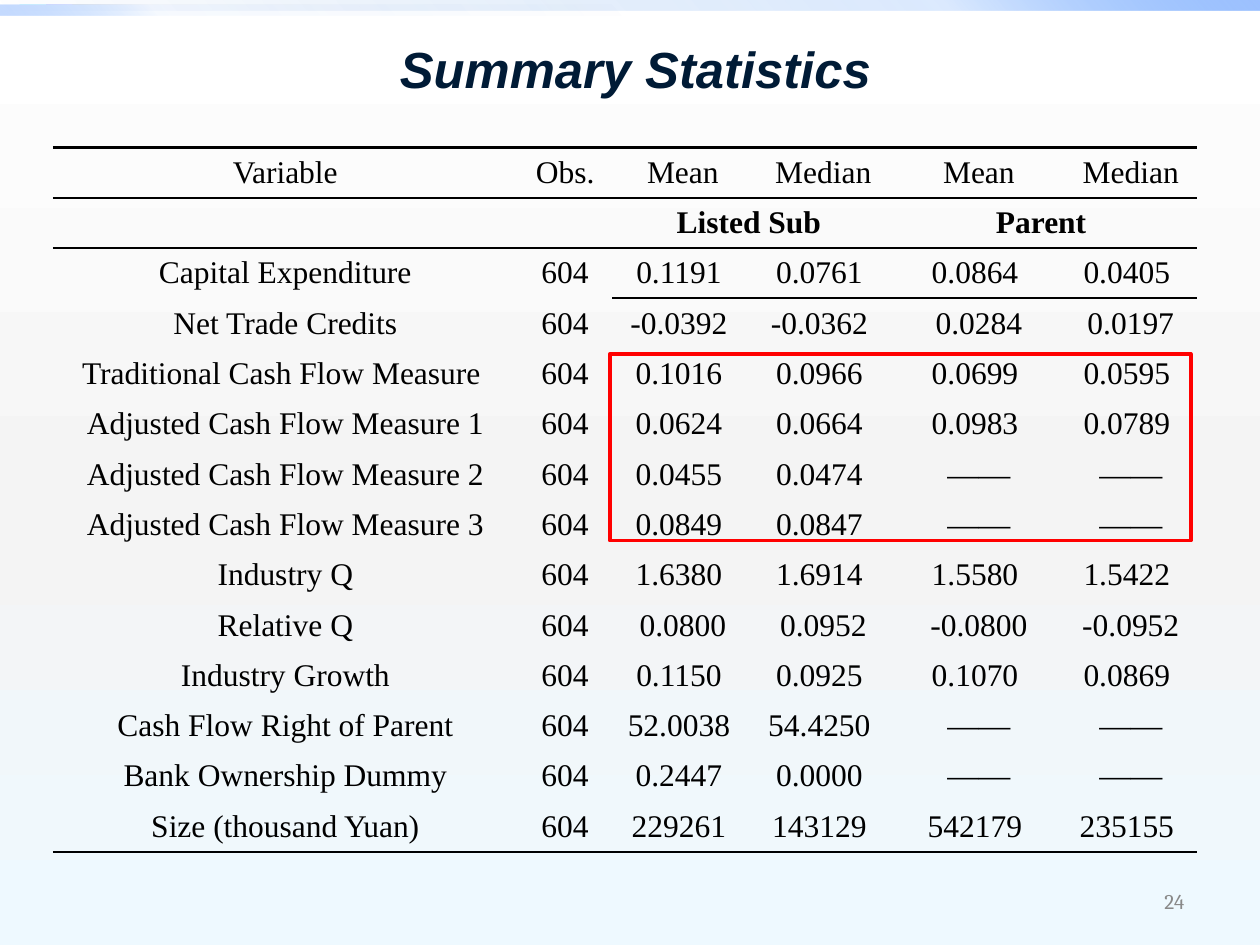
from lxml.etree import SubElement
from pptx import Presentation
from pptx.dml.color import RGBColor
from pptx.enum.shapes import MSO_SHAPE
from pptx.enum.text import MSO_ANCHOR, PP_ALIGN
from pptx.oxml import parse_xml
from pptx.oxml.ns import nsdecls, qn
from pptx.util import Inches, Pt

BLACK = RGBColor(0x00, 0x00, 0x00)
NAVY = RGBColor(0x00, 0x1B, 0x36)
GRAY = RGBColor(0x89, 0x89, 0x89)
RED = RGBColor(0xFF, 0x00, 0x00)
WHITE = RGBColor(0xFF, 0xFF, 0xFF)
PALE = RGBColor(0xF4, 0xF4, 0xF4)
ICE = RGBColor(0xEE, 0xF9, 0xFF)
DEEP = RGBColor(0x00, 0x58, 0xB7)
BLUE = RGBColor(0x4F, 0x95, 0xFF)
SKY = RGBColor(0x9E, 0xC2, 0xFF)

PLAIN = "{2D5ABB26-0587-4C30-8999-92F81FD0307C}"
DASH = "——"
WIDTHS = (3.69, 0.75, 1.12, 1.11, 1.36, 1.05)
HEAD = ("Variable", "Obs.", "Mean", "Median", "Mean", "Median")
GROUPS = ("", "", "Listed Sub ", "", "Parent ", "")
STATS = (
    ("Capital Expenditure", "0.1191 ", "0.0761 ", "0.0864 ", "0.0405 "),
    ("Net Trade Credits", "-0.0392 ", "-0.0362 ", "0.0284", "0.0197"),
    ("Traditional Cash Flow Measure ", "0.1016 ", "0.0966 ", "0.0699 ", "0.0595 "),
    ("Adjusted Cash Flow Measure 1", "0.0624 ", "0.0664 ", "0.0983 ", "0.0789 "),
    ("Adjusted Cash Flow Measure 2", "0.0455 ", "0.0474 ", DASH, DASH),
    ("Adjusted Cash Flow Measure 3", "0.0849 ", "0.0847 ", DASH, DASH),
    ("Industry Q", "1.6380 ", "1.6914 ", "1.5580 ", "1.5422 "),
    ("Relative Q", "0.0800", "0.0952", "-0.0800", "-0.0952"),
    ("Industry Growth", "0.1150 ", "0.0925 ", "0.1070 ", "0.0869 "),
    ("Cash Flow Right of Parent", "52.0038 ", "54.4250 ", DASH, DASH),
    ("Bank Ownership Dummy", "0.2447 ", "0.0000 ", DASH, DASH),
    ("Size (thousand Yuan)", "229261 ", "143129 ", "542179 ", "235155 "),
)


def write(frame, words, font="Times New Roman", size=18, color=BLACK,
          bold=False, italic=False, align=PP_ALIGN.CENTER):
    para = frame.paragraphs[0]
    para.alignment = align
    run = para.add_run()
    run.text = words
    run.font.name = font
    run.font.size = Pt(size)
    run.font.color.rgb = color
    run.font.bold = bold
    run.font.italic = italic


def blend(fill, root, stops, angle):
    fill.gradient()
    grad = root.find(".//" + qn("a:gradFill"))
    items = grad.find(qn("a:gsLst"))
    for old in list(items):
        items.remove(old)
    for place, color, alpha in stops:
        stop = SubElement(items, qn("a:gs"), pos=str(place * 1000))
        tone = SubElement(stop, qn("a:srgbClr"), val=str(color))
        if alpha < 100:
            SubElement(tone, qn("a:alpha"), val=str(alpha * 1000))
    grad.find(qn("a:lin")).set("ang", str(angle * 60000))


def add_bar(slide, box, stops, angle):
    bar = slide.shapes.add_shape(MSO_SHAPE.RECTANGLE, *map(Inches, box))
    bar.shadow.inherit = False
    bar.line.fill.background()
    blend(bar.fill, bar._element, stops, angle)


def add_back(slide):
    blend(slide.background.fill, slide._element,
          ((0, WHITE, 100), (55, PALE, 100), (100, ICE, 100)), 90)
    add_bar(slide, (0, 0, 10, 0.08),
            ((0, DEEP, 0), (75, BLUE, 20), (100, SKY, 100)), 315)
    add_bar(slide, (0, 0.04, 5, 0.08),
            ((0, DEEP, 0), (75, BLUE, 5), (100, SKY, 60)), 135)


def add_title(slide, box, words):
    title = slide.shapes.title
    title.left, title.top, title.width, title.height = map(Inches, box)
    title.text_frame.vertical_anchor = MSO_ANCHOR.MIDDLE
    write(title.text_frame, words, font="Arial", size=29, color=NAVY,
          bold=True, italic=True)


def add_number(slide, box, words):
    frame = slide.shapes.add_textbox(*map(Inches, box)).text_frame
    frame.word_wrap = True
    frame.vertical_anchor = MSO_ANCHOR.MIDDLE
    write(frame, words, font="Cambria", size=12, color=GRAY, align=PP_ALIGN.RIGHT)


def rule(cell, side):
    cell._tc.get_or_add_tcPr().insert(0, parse_xml(
        f'<a:{side} {nsdecls("a")} w="{Pt(1.5)}"><a:solidFill>'
        f'<a:srgbClr val="{BLACK}"/></a:solidFill></a:{side}>'))


def add_stats(slide, box):
    rows = [HEAD, GROUPS] + [(name, "604", *nums) for name, *nums in STATS]
    last = len(rows) - 1
    frame = slide.shapes.add_table(len(rows), len(HEAD), *map(Inches, box))
    table = frame.table
    table.first_row = table.horz_banding = False
    table._tbl.tblPr.find(qn("a:tableStyleId")).text = PLAIN
    for col, width in zip(table.columns, WIDTHS):
        col.width = Inches(width)
    for r, row in enumerate(rows):
        for c, words in enumerate(row):
            cell = table.cell(r, c)
            cell.fill.background()
            cell.vertical_anchor = MSO_ANCHOR.MIDDLE
            cell.margin_left = cell.margin_right = Inches(0.07)
            cell.margin_top = cell.margin_bottom = 0
            if words:
                write(cell.text_frame, words, bold=r == 1)
            if r in (0, last) or (r == 1 and c > 1):
                rule(cell, "lnB")
            if r < 2 or (r == 2 and c > 1):
                rule(cell, "lnT")
    for c in (2, 4):
        table.cell(1, c).merge(table.cell(1, c + 1))


def add_mark(slide, box):
    mark = slide.shapes.add_shape(MSO_SHAPE.RECTANGLE, *map(Inches, box))
    mark.shadow.inherit = False
    mark.fill.background()
    mark.line.color.rgb = RED
    mark.line.width = Pt(2.25)
    SubElement(mark.line._get_or_add_ln(), qn("a:round"))


def main():
    deck = Presentation()
    deck.slide_width, deck.slide_height = Inches(10), Inches(7.5)
    slide = deck.slides.add_slide(deck.slide_layouts[5])
    add_back(slide)
    add_title(slide, (0.67, 0.17, 8.75, 0.75), "Summary Statistics")
    add_number(slide, (7.17, 6.95, 2.33, 0.4), "24")
    add_stats(slide, (0.42, 1.17, 9.08, 5.59))
    add_mark(slide, (4.84, 2.81, 4.61, 1.48))
    deck.save("out.pptx")


if __name__ == "__main__":
    main()
